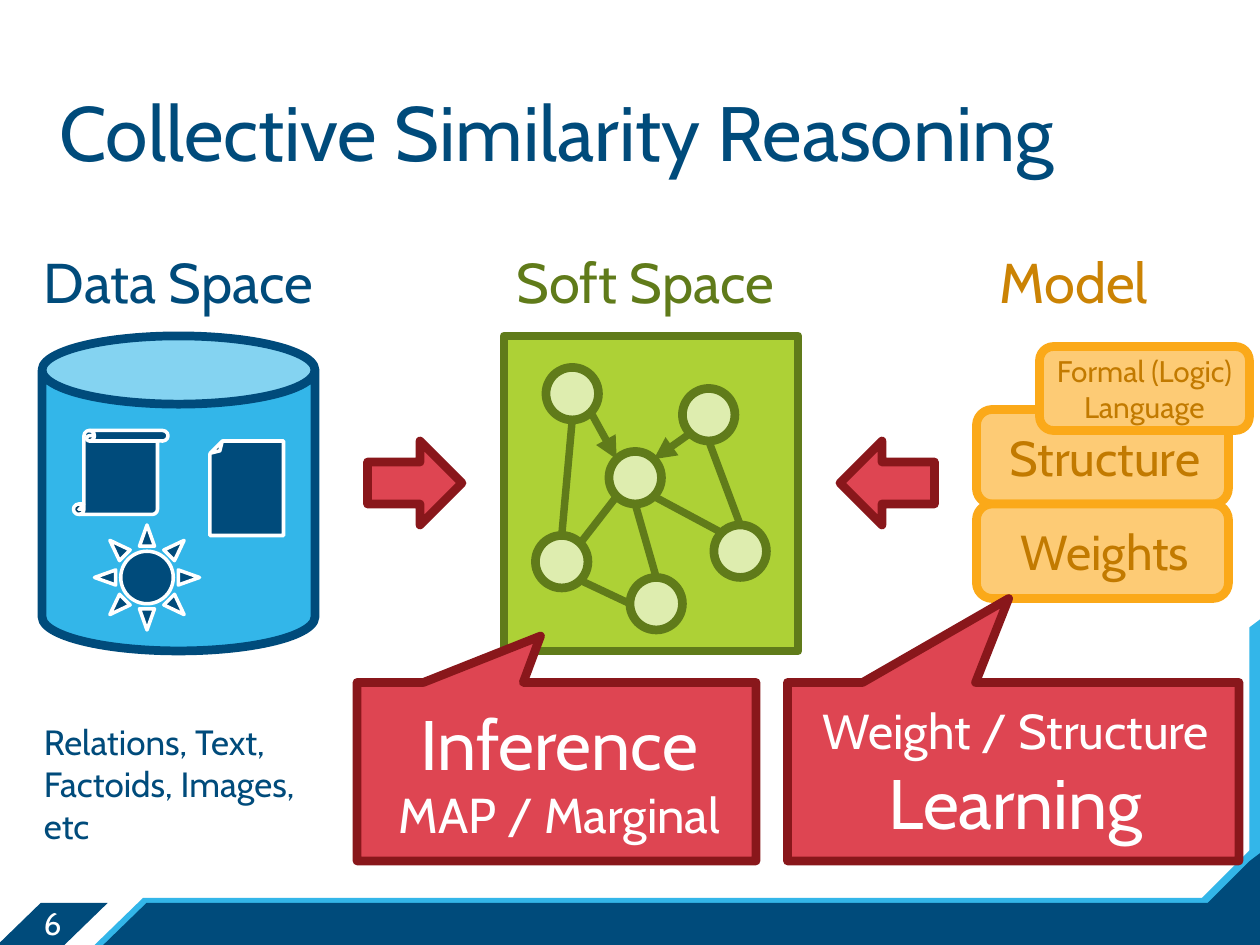
from lxml.etree import SubElement
from pptx import Presentation
from pptx.dml.color import RGBColor
from pptx.enum.shapes import MSO_CONNECTOR, MSO_SHAPE
from pptx.enum.text import MSO_ANCHOR, MSO_AUTO_SIZE, PP_ALIGN
from pptx.oxml.ns import qn
from pptx.util import Pt

COLORS = {
    "navy": "004B7B", "sky": "33B6E9", "white": "FFFFFF",
    "green": "ADD136", "olive": "607B1A", "pale green": "DEEDAF",
    "red": "DE4552", "maroon": "89171B",
    "peach": "FDCB75", "orange": "FBA919", "brown": "C27A00", "ochre": "CB8304",
}
STANDARD_INSETS = (7.2, 3.6, 7.2, 3.6)
INDENTED_INSETS = (10, 3.6, 7.2, 3.6)
NO_INSETS = (0, 0, 0, 0)


class SlideBuilder:
    font = "Cabin"
    outline_width = 5
    edge_width = 4.25

    def __init__(self, slide):
        self.slide = slide

    def color(self, name):
        return RGBColor.from_string(COLORS[name])

    def fill_text(self, shape, lines, color, insets, align, anchor, wrap=True):
        frame = shape.text_frame
        frame.word_wrap = wrap
        frame.vertical_anchor = anchor
        frame.margin_left, frame.margin_top, frame.margin_right, frame.margin_bottom = map(Pt, insets)
        paragraph = frame.paragraphs[0]
        paragraph.alignment = align
        for index, (text, size) in enumerate(lines):
            if index:
                paragraph.add_line_break()
            run = paragraph.add_run()
            run.text = text
            run.font.name = self.font
            run.font.size = Pt(size)
            run.font.color.rgb = self.color(color)

    def text(self, box, text, size, color, insets=STANDARD_INSETS, wrap=True,
             align=PP_ALIGN.LEFT, anchor=MSO_ANCHOR.TOP):
        shape = self.slide.shapes.add_textbox(*map(Pt, box))
        self.fill_text(shape, [(text, size)], color, insets, align, anchor, wrap)
        shape.text_frame.auto_size = MSO_AUTO_SIZE.NONE if wrap else MSO_AUTO_SIZE.SHAPE_TO_FIT_TEXT

    def shape(self, kind, box, fill, line=None, width=outline_width, rotation=0,
              adjustments=(), flip=False):
        shape = self.slide.shapes.add_shape(kind, *map(Pt, box))
        shape.shadow.inherit = False
        shape.rotation = rotation
        for index, value in enumerate(adjustments):
            shape.adjustments[index] = value
        if flip:
            shape._element.spPr.find(qn("a:xfrm")).set("flipH", "1")
        shape.fill.solid()
        shape.fill.fore_color.rgb = self.color(fill)
        if line:
            shape.line.color.rgb = self.color(line)
            shape.line.width = Pt(width)
        else:
            shape.line.fill.background()
        return shape

    def labelled(self, kind, box, fill, line, lines, color, insets=INDENTED_INSETS, adjustments=()):
        shape = self.shape(kind, box, fill, line, adjustments=adjustments)
        self.fill_text(shape, lines, color, insets, PP_ALIGN.CENTER, MSO_ANCHOR.MIDDLE)

    def edge(self, start, end, color, arrow=False):
        connector = self.slide.shapes.add_connector(MSO_CONNECTOR.STRAIGHT, *map(Pt, start + end))
        connector.line.color.rgb = self.color(color)
        connector.line.width = Pt(self.edge_width)
        properties = connector._element.spPr
        if arrow:
            SubElement(properties.find(qn("a:ln")), qn("a:tailEnd"), type="triangle")
        SubElement(properties, qn("a:effectLst"))


def draw_footer(builder):
    bar, corner = MSO_SHAPE.PARALLELOGRAM, MSO_SHAPE.RIGHT_TRIANGLE
    slant = [1.03]
    builder.shape(bar, (54, 513, 636, 27), "sky", adjustments=slant)
    builder.shape(corner, (660, 480, 60, 60), "sky", rotation=270)
    builder.shape(corner, (666, 486, 54, 54), "navy", rotation=270)
    builder.shape(bar, (59, 516, 637, 24), "navy", adjustments=slant)
    builder.shape(bar, (648, 420, 138, 6), "sky", rotation=270, adjustments=[0.75], flip=True)
    builder.shape(bar, (-1.5, 516, 63, 24), "navy", adjustments=slant)
    builder.text((9, 516, 42, 22.5), "6", 18, "white", NO_INSETS,
                 align=PP_ALIGN.CENTER, anchor=MSO_ANCHOR.MIDDLE)


def draw_graph(builder):
    diameter = 30
    radius = diameter / 2
    diagonal = radius * 0.5 ** 0.5
    sites = {
        "top": (0, -radius), "bottom": (0, radius), "left": (-radius, 0),
        "top left": (-diagonal, -diagonal), "top right": (diagonal, -diagonal),
        "bottom left": (-diagonal, diagonal), "bottom right": (diagonal, diagonal),
    }
    nodes = {
        "upper left": (312, 210), "upper right": (390, 222), "centre": (348, 258),
        "lower left": (306, 306), "bottom": (360, 330), "lower right": (408, 300),
    }
    edges = [
        ("upper left", "bottom right", "centre", "top left", True),
        ("upper right", "bottom left", "centre", "top right", True),
        ("lower right", "top left", "centre", "bottom right", False),
        ("bottom", "top", "centre", "bottom", False),
        ("lower left", "top right", "centre", "bottom left", False),
        ("lower left", "top", "upper left", "bottom", False),
        ("lower left", "bottom right", "bottom", "left", False),
        ("upper right", "bottom", "lower right", "top", False),
    ]

    def anchor(node, site):
        return tuple(corner + radius + offset for corner, offset in zip(nodes[node], sites[site]))

    for left, top in nodes.values():
        builder.shape(MSO_SHAPE.OVAL, (left, top, diameter, diameter), "pale green", "olive")
    for source, source_site, target, target_site, arrow in edges:
        builder.edge(anchor(source, source_site), anchor(target, target_site), "olive", arrow)


def main():
    presentation = Presentation()
    presentation.slide_width, presentation.slide_height = Pt(720), Pt(540)
    builder = SlideBuilder(presentation.slides.add_slide(presentation.slide_layouts[6]))

    draw_footer(builder)
    builder.text((24, 45, 674, 55), "Collective Similarity Reasoning", 44, "navy", INDENTED_INSETS)

    builder.shape(MSO_SHAPE.CAN, (24, 192, 156, 180), "sky", "navy")
    builder.shape(MSO_SHAPE.RECTANGLE, (288, 192, 168, 180), "green", "olive")
    for index, text in enumerate(["Structure", "Weights"]):
        builder.labelled(MSO_SHAPE.ROUNDED_RECTANGLE, (558, 234 + 54 * index, 144, 54),
                         "peach", "orange", [(text, 28)], "brown")

    for left, width, text, color in [
        (288, 166, "Soft Space", "olive"),
        (18, 175, "Data Space", "navy"),
        (564, 100, "Model", "ochre"),
    ]:
        builder.text((left, 138, width, 46), text, 32, color, wrap=False)

    draw_graph(builder)
    for left, rotation in [(480, 0), (210, 180)]:
        builder.shape(MSO_SHAPE.LEFT_ARROW, (left, 252, 54, 48), "red", "maroon", rotation=rotation)

    builder.labelled(MSO_SHAPE.ROUNDED_RECTANGLE, (594, 198, 120, 48), "peach", "orange",
                     [("Formal (Logic) Language", 17)], "brown", NO_INSETS)

    for kind, box, rotation in [
        (MSO_SHAPE.VERTICAL_SCROLL, (42, 246, 54, 48), 0),
        (MSO_SHAPE.FOLDED_CORNER, (120, 252, 42, 54), 180),
        (MSO_SHAPE.SUN, (54, 300, 60, 60), 0),
    ]:
        builder.shape(kind, box, "navy", "white", 2, rotation)
    builder.text((18, 408, 174, 80), "Relations, Text, Factoids, Images, etc", 20, "navy")

    for left, width, tip, lines in [
        (204, 228, [-0.04, -0.76], [("Inference", 40), ("MAP / Marginal", 28)]),
        (450, 258, [-0.01, -0.97], [("Weight / Structure", 28), ("Learning", 40)]),
    ]:
        builder.labelled(MSO_SHAPE.RECTANGULAR_CALLOUT, (left, 390, width, 102), "red", "maroon",
                         lines, "white", adjustments=tip)

    presentation.save("out.pptx")


if __name__ == "__main__":
    main()
